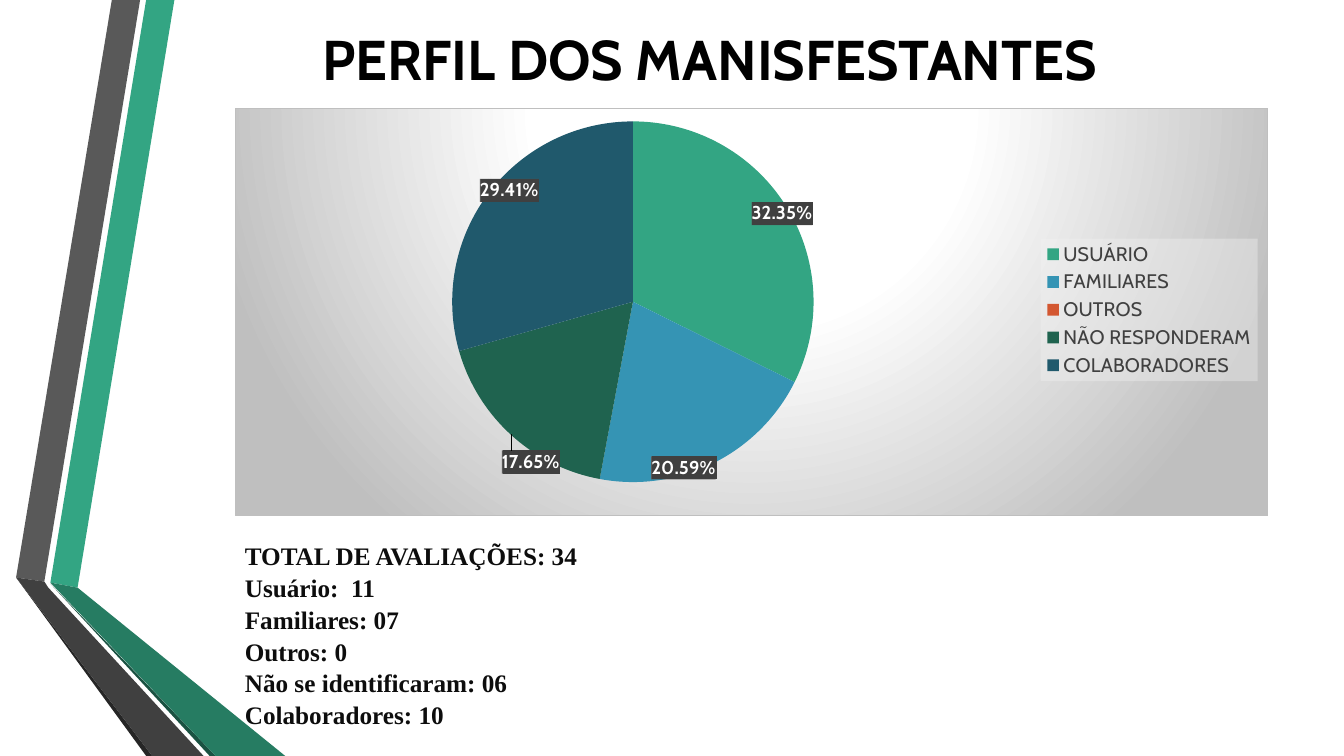
import dataclasses

import lxml.etree
import pptx
import pptx.chart.data
import pptx.dml.color
import pptx.enum.chart
import pptx.enum.text
import pptx.oxml
import pptx.oxml.ns
import pptx.util

PX = 9144


@dataclasses.dataclass(frozen=True)
class Theme:
    heading_font: str = "Cabin"
    body_font: str = "Times New Roman"
    title_size: int = 40
    body_size: int = 18
    legend_size: int = 14
    label_size: float = 13.3
    title: str = "000000"
    body: str = "0D0D0D"
    legend: str = "404040"
    label: str = "FFFFFF"
    pattern_front: str = "404040"
    pattern_back: str = "595959"
    panel_light: str = "FFFFFF"
    panel_dark: str = "BFBFBF"
    legend_panel: str = "F2F2F2"
    green: str = "33A583"
    green_fold: str = "267C62"
    green_edge: str = "1A5242"
    gray: str = "595959"
    gray_fold: str = "404040"
    gray_edge: str = "262626"


THEME = Theme()

PROFILE = [
    ("USUÁRIO", 32.35, "33A583", (0.07, -0.1)),
    ("FAMILIARES", 20.59, "3594B4", (0.01, 0.21)),
    ("OUTROS", 0, "D35731", None),
    ("NÃO RESPONDERAM", 17.65, "1F634F", (-0.04, 0.23)),
    ("COLABORADORES", 29.41, "20596C", (-0.05, -0.14)),
]

TOTALS = [
    "TOTAL DE AVALIAÇÕES: 34",
    "Usuário:  11",
    "Familiares: 07",
    "Outros: 0",
    "Não se identificaram: 06",
    "Colaboradores: 10",
]

RIBBONS = [
    (THEME.green, [(50, 578), (77, 583), (173, 0), (145, 0)]),
    (THEME.gray, [(139, 0), (111, 0), (16, 573), (44, 577)]),
    (THEME.gray_edge, [(16, 573), (145, 750), (151, 750)]),
    (THEME.green_edge, [(50, 579), (208, 750), (214, 750)]),
    (THEME.green_fold, [(50, 578), (214, 750), (283, 750), (77, 583)]),
    (THEME.gray_fold, [(202, 750), (48, 583), (44, 577), (16, 573), (151, 750)]),
]


def rgb(value):
    return pptx.dml.color.RGBColor.from_string(value)


def emu(box):
    return [length * PX for length in box]


def chart_xml(tag, content):
    namespaces = pptx.oxml.ns.nsdecls("c", "a")
    return pptx.oxml.parse_xml(f"<c:{tag} {namespaces}>{content}</c:{tag}>")


def style_font(font, name, size, color, bold=False):
    font.name = name
    font.size = pptx.util.Pt(size)
    font.bold = bold
    font.color.rgb = rgb(color)


def draw_ribbons(slide, box):
    left, top = box[:2]
    for color, outline in RIBBONS:
        points = [(left + x, top + y) for x, y in outline]
        builder = slide.shapes.build_freeform(*points[0], scale=PX)
        builder.add_line_segments(points[1:], close=True)
        shape = builder.convert_to_shape()
        shape.shadow.inherit = False
        shape.fill.solid()
        shape.fill.fore_color.rgb = rgb(color)
        shape.line.fill.background()


def write_title(slide, box):
    title = slide.shapes.title
    title.left, title.top, title.width, title.height = emu(box)
    frame = title.text_frame
    frame.word_wrap = True
    frame.vertical_anchor = pptx.enum.text.MSO_ANCHOR.MIDDLE
    paragraph = frame.paragraphs[0]
    paragraph.alignment = pptx.enum.text.PP_ALIGN.CENTER
    run = paragraph.add_run()
    run.text = "PERFIL DOS MANISFESTANTES "
    style_font(run.font, THEME.heading_font, THEME.title_size, THEME.title, True)


def layout_xml(x, y, width=None, height=None, inner=False):
    target = '<c:layoutTarget val="inner"/>' if inner else ""
    modes = '<c:xMode val="edge"/><c:yMode val="edge"/>' if width else ""
    size = f'<c:w val="{width}"/><c:h val="{height}"/>' if width else ""
    return (f'<c:manualLayout>{target}{modes}<c:x val="{x}"/><c:y val="{y}"/>'
            f"{size}</c:manualLayout>")


def label_style():
    font = THEME.heading_font
    flags = "".join(
        f'<c:show{name} val="{int(name == "Percent")}"/>'
        for name in ("LegendKey", "Val", "CatName", "SerName", "Percent", "BubbleSize")
    )
    return (
        '<c:numFmt formatCode="0.00%" sourceLinked="0"/>'
        '<c:spPr><a:pattFill prst="dkVert">'
        f'<a:fgClr><a:srgbClr val="{THEME.pattern_front}"/></a:fgClr>'
        f'<a:bgClr><a:srgbClr val="{THEME.pattern_back}"/></a:bgClr>'
        "</a:pattFill><a:ln><a:noFill/></a:ln></c:spPr>"
        "<c:txPr><a:bodyPr/><a:p><a:pPr>"
        f'<a:defRPr sz="{round(THEME.label_size * 100)}" b="1"><a:solidFill>'
        f'<a:srgbClr val="{THEME.label}"/></a:solidFill><a:latin typeface="{font}"/>'
        '</a:defRPr></a:pPr><a:endParaRPr lang="pt-BR"/></a:p></c:txPr>'
        f'<c:dLblPos val="ctr"/>{flags}'
    )


def label_slices(series):
    style = label_style()
    labels = ""
    for index, (_, _, _, offset) in enumerate(PROFILE):
        content = '<c:delete val="1"/>'
        if offset:
            content = f"<c:layout>{layout_xml(*offset)}</c:layout>{style}"
        labels += f'<c:dLbl><c:idx val="{index}"/>{content}</c:dLbl>'
    leader = '<c:showLeaderLines val="1"/>'
    categories = series._element.find(pptx.oxml.ns.qn("c:cat"))
    categories.addprevious(chart_xml("dLbls", labels + style + leader))


def style_panel(chart):
    stops = [(0, THEME.panel_light), (39, THEME.panel_light), (100, THEME.panel_dark)]
    gradient = "".join(
        f'<a:gs pos="{position * 1000}"><a:srgbClr val="{color}"/></a:gs>'
        for position, color in stops
    )
    panel = chart_xml("spPr", (
        f"<a:gradFill><a:gsLst>{gradient}</a:gsLst>"
        '<a:path path="circle"><a:fillToRect l="50000" t="-80000" r="50000" b="180000"/>'
        f'</a:path></a:gradFill><a:ln w="9525"><a:solidFill>'
        f'<a:srgbClr val="{THEME.panel_dark}"/></a:solidFill></a:ln>'
    ))
    chart._chartSpace.find(pptx.oxml.ns.qn("c:chart")).addnext(panel)


def style_legend(chart):
    chart.has_legend = True
    legend = chart.legend
    legend.position = pptx.enum.chart.XL_LEGEND_POSITION.RIGHT
    legend.include_in_layout = False
    style_font(legend.font, THEME.heading_font, THEME.legend_size, THEME.legend)
    element = legend._element
    for layout in element.findall(pptx.oxml.ns.qn("c:layout")):
        element.remove(layout)
    position = element.find(pptx.oxml.ns.qn("c:legendPos"))
    position.addnext(chart_xml("layout", layout_xml(0.78, 0.32, 0.21, 0.35)))
    panel = chart_xml("spPr", (
        f'<a:solidFill><a:srgbClr val="{THEME.legend_panel}">'
        '<a:alpha val="39000"/></a:srgbClr></a:solidFill>'
    ))
    element.find(pptx.oxml.ns.qn("c:txPr")).addprevious(panel)


def draw_profile_chart(slide, box):
    data = pptx.chart.data.CategoryChartData()
    data.categories = [name for name, *_ in PROFILE]
    data.add_series("Series 1", [value for _, value, *_ in PROFILE])
    pie = pptx.enum.chart.XL_CHART_TYPE.PIE
    chart = slide.shapes.add_chart(pie, *emu(box), data).chart
    chart.has_title = False
    style_font(chart.font, THEME.heading_font, 10, THEME.title)
    plot = chart.plots[0]
    plot.vary_by_categories = True
    series = plot.series[0]
    for index, (_, _, color, _) in enumerate(PROFILE):
        slice_format = series.points[index].format
        slice_format.fill.solid()
        slice_format.fill.fore_color.rgb = rgb(color)
        slice_format.line.fill.background()
    label_slices(series)
    style_legend(chart)
    style_panel(chart)
    plot_area = plot._element.getparent()
    for layout in plot_area.findall(pptx.oxml.ns.qn("c:layout")):
        plot_area.remove(layout)
    plot_area.insert(0, chart_xml("layout", layout_xml(0.21, 0.03, 0.35, 0.89, True)))


def write_totals(slide, box):
    frame = slide.shapes.add_textbox(*emu(box)).text_frame
    frame.word_wrap = True
    for index, line in enumerate(TOTALS):
        paragraph = frame.add_paragraph() if index else frame.paragraphs[0]
        paragraph.line_spacing = 1.05
        run = paragraph.add_run()
        run.text = line
        style_font(run.font, THEME.body_font, THEME.body_size, THEME.body, True)


def main():
    presentation = pptx.Presentation()
    presentation.slide_width, presentation.slide_height = emu((1333, 750))
    slide = presentation.slides.add_slide(presentation.slide_layouts[5])
    draw_ribbons(slide, (0, 0, 283, 750))
    write_title(slide, (162, 9, 1096, 98))
    draw_profile_chart(slide, (233, 107, 1025, 405))
    write_totals(slide, (233, 530, 398, 220))
    presentation.save("out.pptx")


if __name__ == "__main__":
    main()
